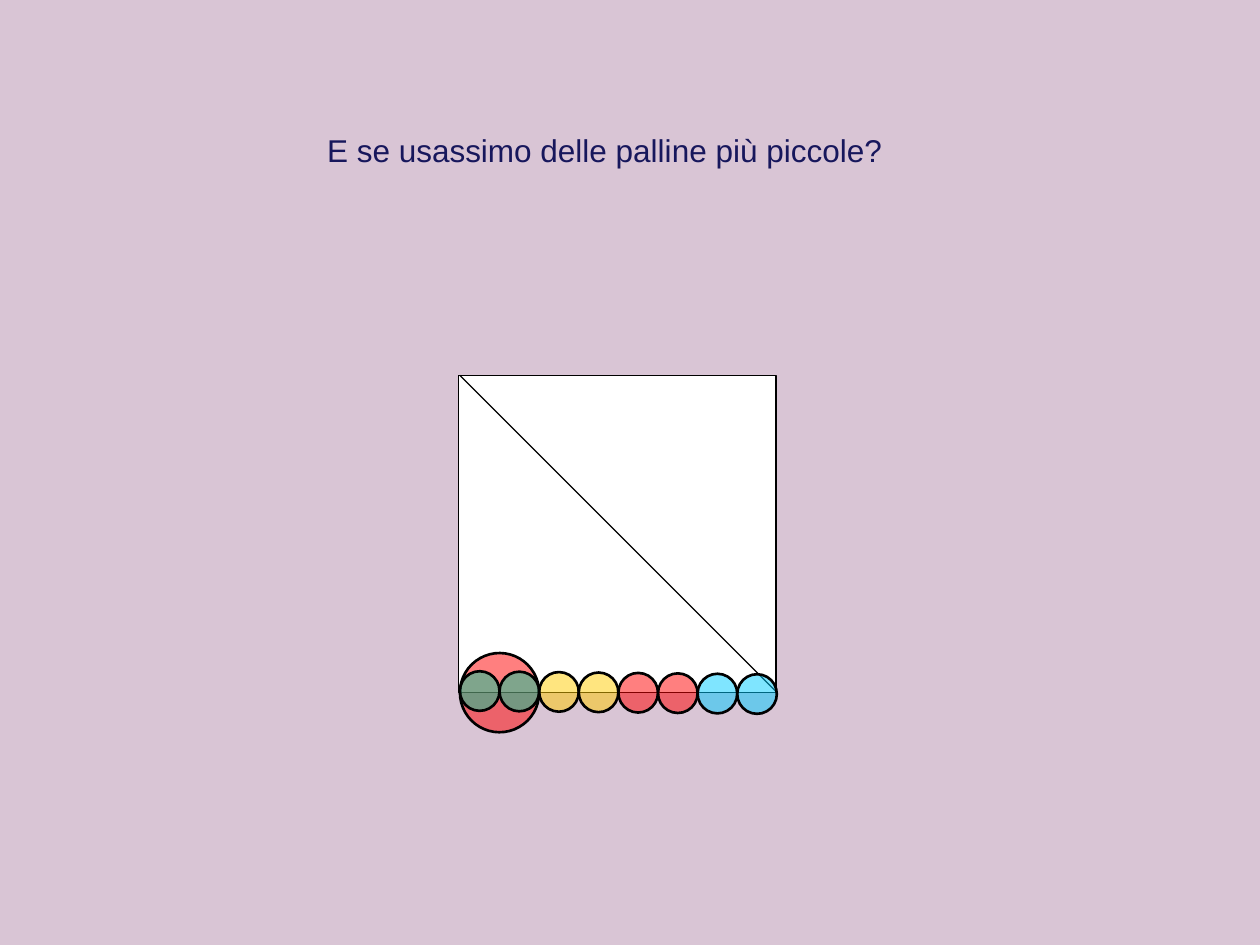
from lxml.etree import SubElement
from pptx import Presentation
from pptx.dml.color import RGBColor as RGB
from pptx.enum.shapes import MSO_CONNECTOR as LINE, MSO_SHAPE as SHAPE
from pptx.enum.text import MSO_ANCHOR as ANCHOR, PP_ALIGN as ALIGN
from pptx.oxml.ns import qn
from pptx.util import Pt

MAUVE = RGB(0xD9, 0xC5, 0xD5)
NAVY = RGB(0x17, 0x17, 0x5C)
BLACK = RGB(0, 0, 0)
WHITE = RGB(0xFF, 0xFF, 0xFF)
RED = RGB(0xFF, 0, 0)
GREEN = RGB(0, 0xCC, 0x99)
GOLD = RGB(0xFF, 0xCC, 0)
BLUE = RGB(0, 0xCC, 0xFF)


class Deck:
    font = {"name": "Arial", "size": Pt(18), "bold": False}
    thin, thick = 0.75, 1.5

    def __init__(self, wide, high):
        self.prs = Presentation()
        self.prs.slide_width, self.prs.slide_height = Pt(wide), Pt(high)
        self.slide = self.prs.slides.add_slide(self.prs.slide_layouts[5])
        fill = self.slide.background.fill
        fill.solid()
        fill.fore_color.rgb = MAUVE

    def title(self, text, x, y, w, h):
        box = self.slide.shapes.title
        place = {"left": x, "top": y, "width": w, "height": h}
        for key, val in place.items():
            setattr(box, key, Pt(val))
        frame = box.text_frame
        frame.text = text
        frame.word_wrap = True
        frame.vertical_anchor = ANCHOR.MIDDLE
        para = frame.paragraphs[0]
        para.alignment = ALIGN.CENTER
        for key, val in self.font.items():
            setattr(para.font, key, val)
        para.font.color.rgb = NAVY

    def stroke(self, item, width):
        item.line.color.rgb = BLACK
        item.line.width = Pt(width)

    def shape(self, kind, x, y, size, color, width):
        item = self.slide.shapes.add_shape(kind, Pt(x), Pt(y), Pt(size), Pt(size))
        item.shadow.inherit = False
        item.fill.solid()
        item.fill.fore_color.rgb = color
        self.stroke(item, width)
        return item

    def square(self, x, y, size):
        self.shape(SHAPE.RECTANGLE, x, y, size, WHITE, self.thin)

    def ball(self, x, mid, size, color):
        item = self.shape(SHAPE.OVAL, x, mid - size / 2, size, color, self.thick)
        item.rotation = 90.5
        # Half-transparent fill
        tone = item._element.spPr.find(qn("a:solidFill")).find(qn("a:srgbClr"))
        SubElement(tone, qn("a:alpha"), val="50000")

    def line(self, x1, y1, x2, y2):
        item = self.slide.shapes.add_connector(
            LINE.STRAIGHT, Pt(x1), Pt(y1), Pt(x2), Pt(y2))
        self.stroke(item, self.thin)
        SubElement(item._element.spPr, qn("a:effectLst"))


def main():
    deck = Deck(720, 540)
    deck.title("E se usassimo delle palline più piccole?", 42.5, 71.3, 606, 28.8)

    # Square with its diagonal
    left, top, side = 262, 214.5, 181.4
    start = left + 0.8
    deck.square(left, top, side)
    deck.line(start, top, start + side, top + side)

    # One large ball, then eight small ones along the base
    step = 22.64
    deck.ball(start, 395.8, 2 * step, RED)
    pairs = [GREEN, GOLD, RED, BLUE]
    for i in range(8):
        deck.ball(start + i * step, 394.9 + i * 0.24, step, pairs[i // 2])

    deck.prs.save("out.pptx")


if __name__ == "__main__":
    main()
